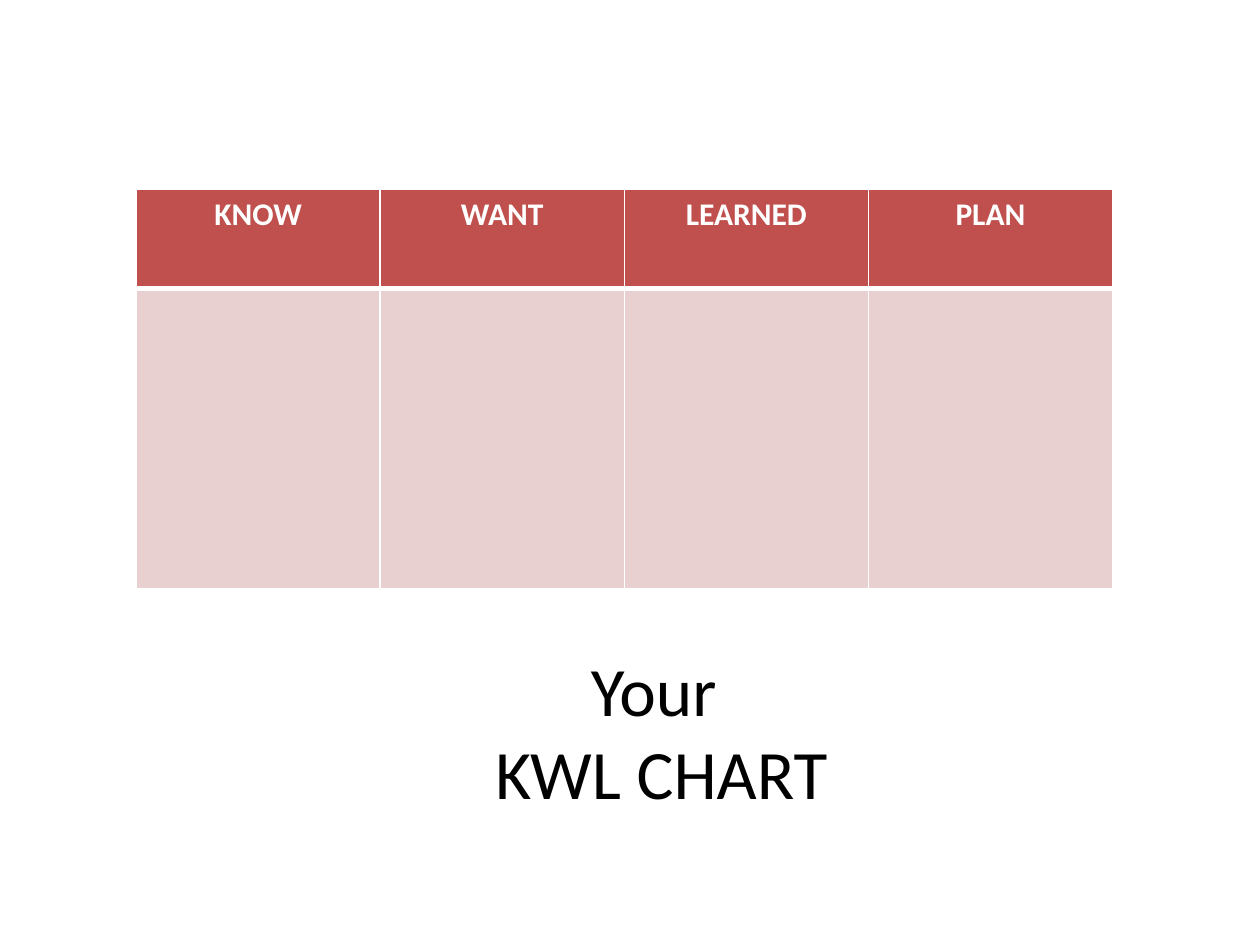
"""Build a slide with a four-column KWL chart and its title."""
from dataclasses import dataclass

from lxml import etree
from pptx import Presentation
from pptx import util as u
from pptx.dml.color import RGBColor
from pptx.enum import text as t
from pptx.oxml import ns


@dataclass(frozen=True)
class Theme:
    """Colours, font and type sizes of the slide."""
    header: str = "C0504D"
    body: str = "E8D0D0"
    light: str = "FFFFFF"
    dark: str = "000000"
    font: str = "Calibri"
    title_size: float = 39.6
    header_size: float = 18


@dataclass(frozen=True)
class Box:
    """A rectangle in shares of the slide's width and height."""
    left: float
    top: float
    width: float
    height: float

    def place(self, width: int, height: int) -> tuple[int, int, int, int]:
        """Return left, top, width and height in slide units."""
        return (int(self.left * width), int(self.top * height),
                int(self.width * width), int(self.height * height))


@dataclass(frozen=True)
class Row:
    """A table row with its height share, fill and border widths."""
    labels: tuple[str, ...]
    share: float
    fill: str
    top: float
    bottom: float


THEME = Theme()
TITLE_BOX = Box(0.075, 5.17 / 7.5, 0.9, 1.25 / 7.5)
TABLE_BOX = Box(0.108, 0.2, 0.775, 3.17 / 7.5)
ROWS = (
    Row(("KNOW", "WANT", "LEARNED", "PLAN"), 0.25, THEME.header, 1, 3),
    Row(("",) * 4, 0.75, THEME.body, 3, 1),
)


def write_text(frame, content: str, *, size: float, color: str, bold: bool = False) -> None:
    """Write centred text with the given format."""
    paragraph = frame.paragraphs[0]
    paragraph.text = content
    paragraph.alignment = t.PP_ALIGN.CENTER
    for run in paragraph.runs:
        run.font.name = THEME.font
        run.font.size = u.Pt(size)
        run.font.bold = bold
        run.font.color.rgb = RGBColor.from_string(color)


def draw_borders(cell, row: Row) -> None:
    """Give a cell solid light borders."""
    properties = cell._tc.get_or_add_tcPr()
    for side, width in (("L", 1), ("R", 1), ("T", row.top), ("B", row.bottom)):
        line = etree.SubElement(properties, ns.qn(f"a:ln{side}"), w=str(u.Pt(width)))
        fill = etree.SubElement(line, ns.qn("a:solidFill"))
        etree.SubElement(fill, ns.qn("a:srgbClr"), val=THEME.light)


def draw_table(slide, area: tuple[int, int, int, int]) -> None:
    """Draw the table with equal columns."""
    columns = len(ROWS[0].labels)
    table = slide.shapes.add_table(len(ROWS), columns, *area).table
    for column in table.columns:
        column.width = area[2] // columns
    for row, table_row in zip(ROWS, table.rows):
        table_row.height = int(area[3] * row.share)
        for label, cell in zip(row.labels, table_row.cells):
            draw_borders(cell, row)
            cell.fill.solid()
            cell.fill.fore_color.rgb = RGBColor.from_string(row.fill)
            if label:
                write_text(cell.text_frame, label, size=THEME.header_size,
                           color=THEME.light, bold=True)


def draw_title(slide, area: tuple[int, int, int, int]) -> None:
    """Move and format the title placeholder."""
    title = slide.shapes.title
    title.left, title.top, title.width, title.height = area
    title.text_frame.auto_size = t.MSO_AUTO_SIZE.NONE
    title.text_frame.vertical_anchor = t.MSO_ANCHOR.MIDDLE
    write_text(title.text_frame, "Your \vKWL CHART", size=THEME.title_size, color=THEME.dark)


def main() -> None:
    """Build and save the presentation."""
    presentation = Presentation()
    presentation.slide_width, presentation.slide_height = u.Inches(10), u.Inches(7.5)
    size = presentation.slide_width, presentation.slide_height
    slide = presentation.slides.add_slide(presentation.slide_layouts.get_by_name("Title Only"))
    draw_title(slide, TITLE_BOX.place(*size))
    draw_table(slide, TABLE_BOX.place(*size))
    presentation.save("out.pptx")


if __name__ == "__main__":
    main()
